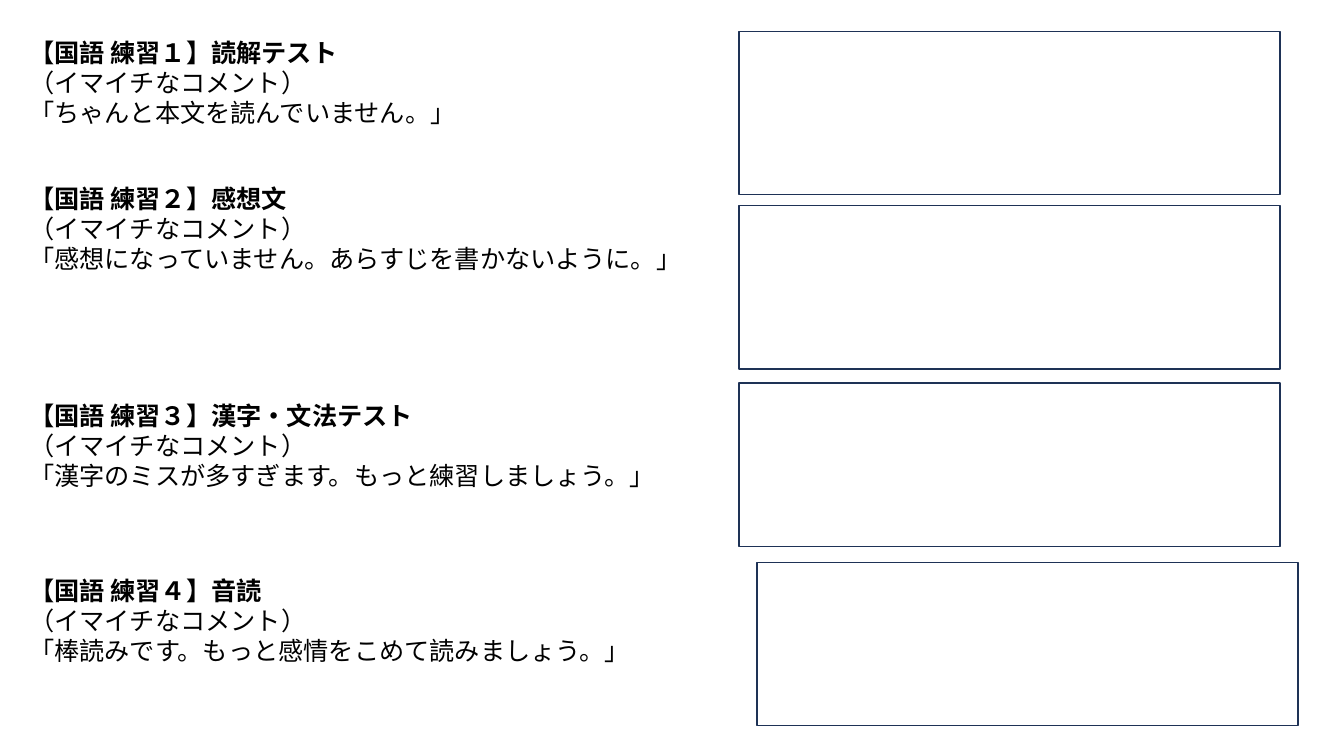
from lxml.etree import SubElement
from pptx import Presentation
from pptx.dml.color import RGBColor
from pptx.enum.shapes import MSO_SHAPE
from pptx.oxml.ns import qn
from pptx.util import Pt

FONT = "Noto Sans CJK JP"
BLACK = RGBColor(0x00, 0x00, 0x00)
WHITE = RGBColor(0xFF, 0xFF, 0xFF)
NAVY = RGBColor(0x1E, 0x32, 0x56)

EXERCISES = [
    ("【国語 練習１】読解テスト", "「ちゃんと本文を読んでいません。」", 23, 72.7, 527.8, 22.3),
    ("【国語 練習２】感想文", "「感想になっていません。あらすじを書かないように。」", 127.4, 94.3, 527.8, 146.9),
    ("【国語 練習３】漢字・文法テスト", "「漢字のミスが多すぎます。もっと練習しましょう。」", 282.2, 72.7, 527.8, 273.6),
    ("【国語 練習４】音読", "「棒読みです。もっと感情をこめて読みましょう。」", 407.5, 72.7, 540.7, 401.8),
]


def add_answer_box(page, left, top):
    box = page.shapes.add_shape(
        MSO_SHAPE.RECTANGLE, Pt(left), Pt(top), Pt(386.6), Pt(116.6)
    )
    box.shadow.inherit = False
    box.fill.solid()
    box.fill.fore_color.rgb = WHITE
    box.line.color.rgb = NAVY
    box.line.width = Pt(1)


def format_span(span, bold):
    span.font.name = FONT
    span.font.size = Pt(18)
    span.font.bold = bold
    span.font.color.rgb = BLACK
    SubElement(span.font._element, qn("a:ea"), typeface=FONT)


def add_exercise(page, heading, comment, top, height):
    box = page.shapes.add_textbox(Pt(13.7), Pt(top), Pt(480), Pt(height))
    frame = box.text_frame
    frame.word_wrap = True
    frame.text = "\n".join([heading, "（イマイチなコメント）", comment])
    for index, para in enumerate(frame.paragraphs):
        para.line_spacing = Pt(21.5)
        for span in para.runs:
            format_span(span, bold=index == 0)


def main():
    deck = Presentation()
    deck.slide_width, deck.slide_height = Pt(960), Pt(540)
    page = deck.slides.add_slide(deck.slide_layouts[6])
    for heading, comment, top, height, box_left, box_top in EXERCISES:
        add_answer_box(page, box_left, box_top)
        add_exercise(page, heading, comment, top, height)
    deck.save("out.pptx")


if __name__ == "__main__":
    main()
